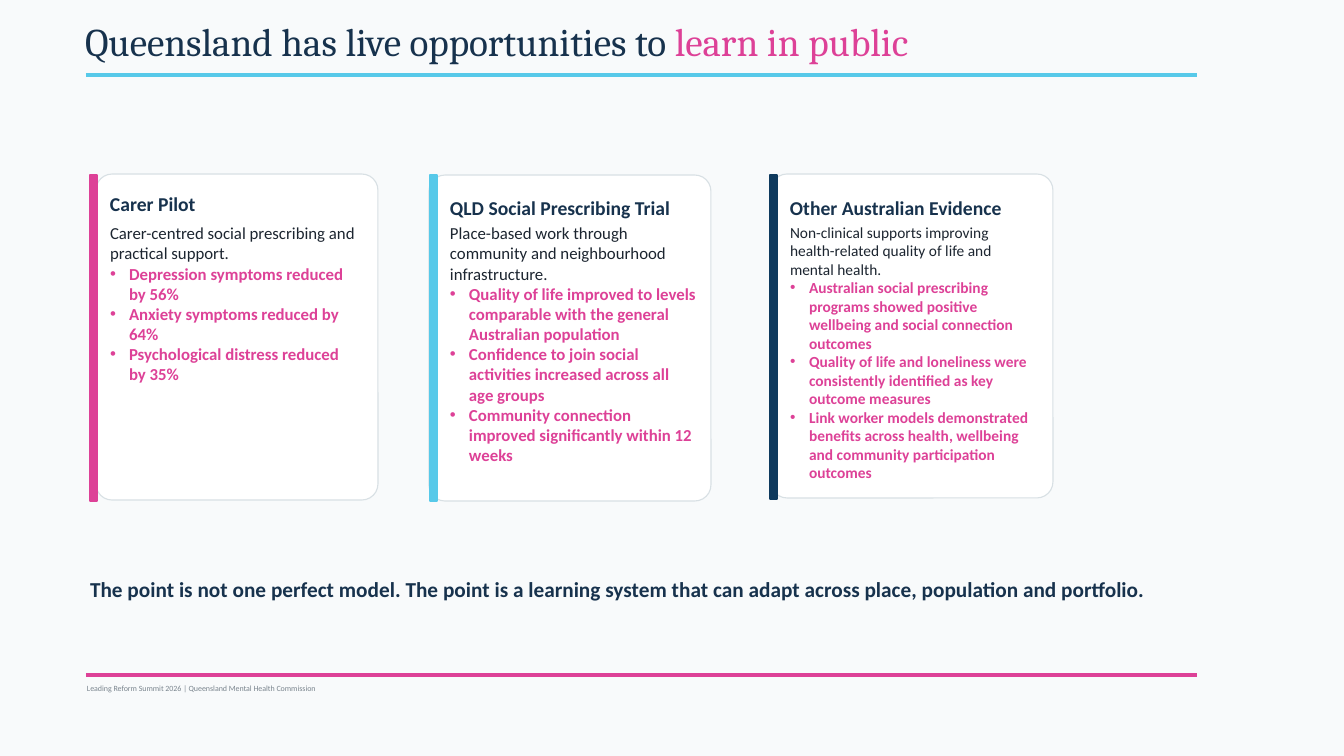
from dataclasses import dataclass

from lxml import etree
from pptx import Presentation
from pptx.dml.color import RGBColor
from pptx.enum.shapes import MSO_CONNECTOR, MSO_SHAPE
from pptx.enum.text import MSO_ANCHOR, MSO_AUTO_SIZE, PP_ALIGN
from pptx.oxml.ns import qn
from pptx.util import Emu, Pt

STRAIGHT = MSO_CONNECTOR.STRAIGHT
RECTANGLE, ROUNDED = MSO_SHAPE.RECTANGLE, MSO_SHAPE.ROUNDED_RECTANGLE
TOP, MIDDLE = MSO_ANCHOR.TOP, MSO_ANCHOR.MIDDLE
NO_FIT, LEFT = MSO_AUTO_SIZE.NONE, PP_ALIGN.LEFT

EMU_PER_PX = 914400 / 100.8
PAGE_WIDTH, PAGE_HEIGHT = 1344, 756
NAVY, PINK, CYAN = "17324D", "DD4197", "57C9E9"
DEEP_BLUE, INK, GREY = "0F3A5E", "1C2530", "7A858E"
WHITE, CARD_LINE, PAPER = "FFFFFF", "D8E0E4", "F8FAFB"
FIRST_TEXT_LEFT, CARD_PITCH = 110, 340
BULLET_INDENT = 19


@dataclass
class Card:
    heading: str
    summary: str
    findings: list[str]
    accent: str
    panel_left: int
    panel_top: int = 174
    height: int = 326
    heading_height: int = 39
    body_height: int = 268
    body_size: int = 12


CARDS = [
    Card("Carer Pilot", "Carer-centred social prescribing and practical support.",
         ["Depression symptoms reduced by 56%",
          "Anxiety symptoms reduced by 64%",
          "Psychological distress reduced by 35%"],
         PINK, panel_left=96, heading_height=32, body_height=237),
    Card("QLD Social Prescribing Trial",
         "Place-based work through community and neighbourhood infrastructure.",
         ["Quality of life improved to levels comparable with the general Australian population",
          "Confidence to join social activities increased across all age groups",
          "Community connection improved significantly within 12 weeks"],
         CYAN, panel_left=429, panel_top=175),
    Card("Other Australian Evidence",
         "Non-clinical supports improving health-related quality of life and mental health.",
         ["Australian social prescribing programs showed positive wellbeing and social connection outcomes",
          "Quality of life and loneliness were consistently identified as key outcome measures",
          "Link worker models demonstrated benefits across health, wellbeing and community participation outcomes"],
         DEEP_BLUE, panel_left=771, height=324, body_size=11),
]


def px(length: int) -> Emu:
    return Emu(round(length * EMU_PER_PX))


def colour(value: str) -> RGBColor:
    return RGBColor.from_string(value)


def set_all(target, values: dict) -> None:
    for name, value in values.items():
        setattr(target, name, value)


def add_span(para, text: str, size: float, hue: str, bold: bool = False,
             typeface: str = "Calibri") -> None:
    span = para.add_run()
    span.text = text
    set_all(span.font, {"name": typeface, "size": Pt(size), "bold": bold})
    span.font.color.rgb = colour(hue)


def add_bullet(para, hue: str) -> None:
    properties = para._p.get_or_add_pPr()
    properties.set("marL", str(px(BULLET_INDENT)))
    properties.set("indent", str(-px(BULLET_INDENT)))
    bullet_colour = etree.SubElement(properties, qn("a:buClr"))
    etree.SubElement(bullet_colour, qn("a:srgbClr")).set("val", hue)
    etree.SubElement(properties, qn("a:buFont")).set("typeface", "Arial")
    etree.SubElement(properties, qn("a:buChar")).set("char", "•")


def add_box(page, left: int, top: int, width: int, height: int, anchor=MIDDLE):
    box = page.shapes.add_textbox(px(left), px(top), px(width), px(height))
    set_all(box.text_frame, {
        "word_wrap": True, "auto_size": NO_FIT, "vertical_anchor": anchor,
        "margin_left": 0, "margin_right": 0, "margin_top": 0, "margin_bottom": 0,
    })
    return box.text_frame


def add_panel(page, kind, left: int, top: int, width: int, height: int,
              fill: str, line: str, weight: float):
    panel = page.shapes.add_shape(kind, px(left), px(top), px(width), px(height))
    panel.shadow.inherit = False
    panel.fill.solid()
    panel.fill.fore_color.rgb = colour(fill)
    panel.line.color.rgb = colour(line)
    panel.line.width = Pt(weight)
    return panel


def add_rule(page, top: int, hue: str) -> None:
    rule = page.shapes.add_connector(STRAIGHT, px(86), px(top), px(1197), px(top))
    rule.line.color.rgb = colour(hue)
    rule.line.width = Pt(3)
    etree.SubElement(rule._element.spPr, qn("a:effectLst"))


def add_card(page, card: Card, text_left: int) -> None:
    # Panel with its accent bar
    panel = add_panel(page, ROUNDED, card.panel_left, card.panel_top, 282,
                      card.height, WHITE, CARD_LINE, 0.8)
    panel.adjustments[0] = 0.057
    add_panel(page, RECTANGLE, text_left - 20, 175, 7, card.height,
              card.accent, card.accent, 1)

    # Heading, summary and findings
    heading = add_box(page, text_left, 188, 250, card.heading_height)
    add_span(heading.paragraphs[0], card.heading, 14, NAVY, bold=True)
    body = add_box(page, text_left, 223, 246, card.body_height, TOP)
    add_span(body.paragraphs[0], card.summary, card.body_size, INK)
    for finding in card.findings:
        para = body.add_paragraph()
        add_bullet(para, PINK)
        add_span(para, finding, card.body_size, PINK, bold=True)


def add_title(page) -> None:
    title = page.shapes.title
    set_all(title, {"left": px(75), "top": px(17), "width": px(1072), "height": px(53)})
    set_all(title.text_frame, {"word_wrap": True, "auto_size": NO_FIT,
                               "vertical_anchor": MIDDLE})
    para = title.text_frame.paragraphs[0]
    set_all(para, {"alignment": LEFT, "line_spacing": 0.9})
    add_span(para, "Queensland has live opportunities to ", 28, NAVY, typeface="Cambria")
    add_span(para, "learn in public", 28, PINK, typeface="Cambria")


def main() -> None:
    deck = Presentation()
    set_all(deck, {"slide_width": px(PAGE_WIDTH), "slide_height": px(PAGE_HEIGHT)})
    page = deck.slides.add_slide(deck.slide_layouts[5])
    page.background.fill.solid()
    page.background.fill.fore_color.rgb = colour(PAPER)

    # Title and rules
    add_title(page)
    add_rule(page, 75, CYAN)
    add_rule(page, 675, PINK)

    # Evidence cards
    for index, card in enumerate(CARDS):
        add_card(page, card, FIRST_TEXT_LEFT + index * CARD_PITCH)

    # Closing message and footer
    message = add_box(page, 90, 568, 1104, 46).paragraphs[0]
    message.line_spacing = 0.9
    add_span(message, "The point is not one perfect model. The point is a learning system "
             "that can adapt across place, population and portfolio.", 15.2, NAVY, bold=True)
    footer = add_box(page, 87, 680, 655, 16).paragraphs[0]
    add_span(footer, "Leading Reform Summit 2026 | Queensland Mental Health Commission",
             5.7, GREY)

    deck.save("out.pptx")


if __name__ == "__main__":
    main()
